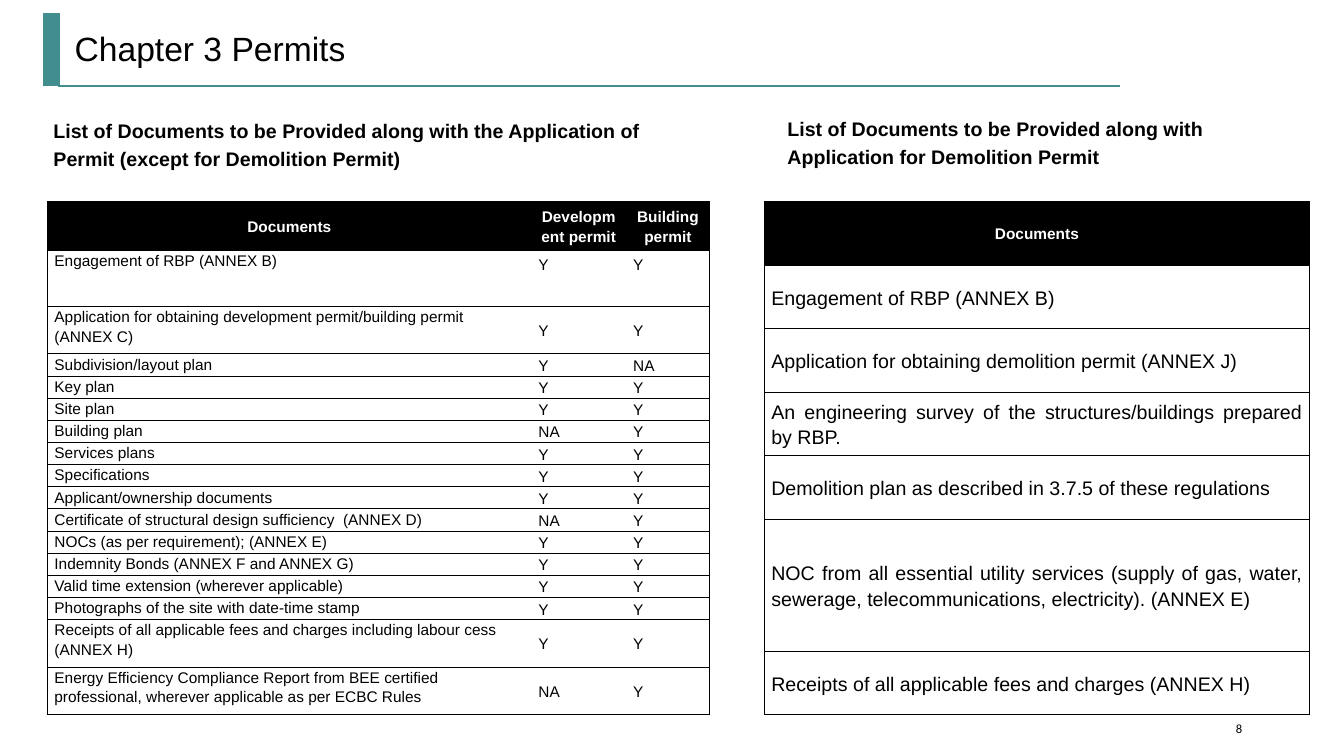
"""Build the permits slide: two headed tables of documents required with an application."""
from dataclasses import dataclass

from lxml import etree
from pptx import Presentation, util as u
from pptx.dml.color import RGBColor
from pptx.enum import shapes, text
from pptx.oxml import ns

TITLE = "Chapter 3 Permits"
PAGE = "8"
HEADINGS = {
    1: ("List of Documents to be Provided along with the Application of Permit "
        "(except for Demolition Permit)", (0.43, 1.08, 6.41, 0.64)),
    3: ("List of Documents to be Provided along with Application for Demolition Permit",
        (7.71, 1.06, 5.28, 0.64)),
}
PERMIT_ROWS = [
    ("Documents", "Development permit", "Building permit"),
    ("Engagement of RBP (ANNEX B)", "Y", "Y"),
    ("Application for obtaining development permit/building permit  (ANNEX C)", "Y", "Y"),
    ("Subdivision/layout plan", "Y", "NA"),
    ("Key plan", "Y", "Y"),
    ("Site plan", "Y", "Y"),
    ("Building plan", "NA", "Y"),
    ("Services plans", "Y", "Y"),
    ("Specifications", "Y", "Y"),
    ("Applicant/ownership documents", "Y", "Y"),
    ("Certificate of structural design sufficiency  (ANNEX D)", "NA", "Y"),
    ("NOCs (as per requirement); (ANNEX E)", "Y", "Y"),
    ("Indemnity Bonds (ANNEX F and ANNEX G)", "Y", "Y"),
    ("Valid time extension (wherever applicable)", "Y", "Y"),
    ("Photographs of the site with date-time stamp", "Y", "Y"),
    ("Receipts of all applicable fees and charges including labour cess (ANNEX H)", "Y", "Y"),
    ("Energy Efficiency Compliance Report from BEE certified professional, "
     "wherever applicable as per ECBC Rules", "NA", "Y"),
]
DEMOLITION_ROWS = [
    ("Documents",),
    ("Engagement of RBP (ANNEX B)",),
    ("Application for obtaining demolition permit (ANNEX J)",),
    ("An engineering survey of the structures/buildings prepared by RBP.",),
    ("Demolition plan as described in 3.7.5 of these regulations",),
    ("NOC from all essential utility services (supply of gas, water, sewerage, "
     "telecommunications, electricity). (ANNEX E)",),
    ("Receipts of all applicable fees and charges (ANNEX H)",),
]
PERMIT_COLS = [4.8, 0.94, 0.83]
PERMIT_HEIGHTS = [0.48, 0.56, 0.47] + [0.22] * 12 + [0.47] * 2
DEMOLITION_COLS = [5.41]
DEMOLITION_HEIGHTS = [0.63] * 5 + [1.31, 0.63]
TABLE_TOP = 2


@dataclass(frozen=True)
class Theme:
    font: str = "Arial"
    page_font: str = "Calibri"
    ink: str = "000000"
    paper: str = "FFFFFF"
    accent: str = "428D8E"
    title: int = 24
    heading: int = 14
    cell: int = 11
    large_cell: int = 14
    page: int = 9
    border: float = 0.5


THEME = Theme()
ALIGN, ANCHOR = text.PP_ALIGN, text.MSO_ANCHOR


def rgb(value):
    return RGBColor.from_string(value)


def write(tf, content, size, color=THEME.ink, font=THEME.font, bold=False,
          align=ALIGN.LEFT, spacing=1.0, gap=0):
    tf.word_wrap = True
    p = tf.paragraphs[0]
    p.text = content
    p.alignment, p.line_spacing = align, spacing
    p.space_before = p.space_after = u.Pt(gap)
    f = p.font
    f.name, f.size, f.bold = font, u.Pt(size), bold
    f.color.rgb = rgb(color)


def place(sp, box):
    sp.left, sp.top, sp.width, sp.height = map(u.Inches, box)


def add_rule(s, start, end, weight):
    line = s.shapes.add_connector(shapes.MSO_CONNECTOR.STRAIGHT,
                                  *map(u.Inches, start + end))
    line.line.color.rgb, line.line.width = rgb(THEME.accent), u.Pt(weight)
    etree.SubElement(line._element.spPr, ns.qn("a:effectLst"))


def set_borders(cell, first, last):
    visible = {"lnL": first, "lnR": last, "lnT": True, "lnB": True}
    tc_pr = cell._tc.get_or_add_tcPr()
    for i, (side, shown) in enumerate(visible.items()):
        ln = etree.Element(ns.qn(f"a:{side}"), w=str(u.Pt(THEME.border)))
        fill = etree.SubElement(ln, ns.qn("a:solidFill" if shown else "a:noFill"))
        if shown:
            etree.SubElement(fill, ns.qn("a:srgbClr"), val=THEME.ink)
        tc_pr.insert(i, ln)


def add_table(s, left, rows, widths, heights, size, gap, align):
    frame = s.shapes.add_table(len(rows), len(widths), *map(
        u.Inches, (left, TABLE_TOP, sum(widths), sum(heights))))
    table = frame.table
    table.first_row = table.horz_banding = False
    for col, width in zip(table.columns, widths):
        col.width = u.Inches(width)
    for row, height in zip(table.rows, heights):
        row.height = u.Inches(height)
    for r, values in enumerate(rows):
        for c, value in enumerate(values):
            cell, header = table.cell(r, c), r == 0
            cell.margin_left = cell.margin_right = u.Inches(0.07)
            cell.margin_top = cell.margin_bottom = 0
            cell.vertical_anchor = ANCHOR.MIDDLE
            cell.fill.solid()
            cell.fill.fore_color.rgb = rgb(THEME.ink if header else THEME.paper)
            if header:
                write(cell.text_frame, value, THEME.cell, THEME.paper, bold=True,
                      align=ALIGN.CENTER, spacing=1.15, gap=3)
            else:
                write(cell.text_frame, value, size, align=align, spacing=1.15, gap=gap)
            set_borders(cell, c == 0, c == len(widths) - 1)
    return table


def main():
    prs = Presentation()
    prs.slide_width, prs.slide_height = u.Inches(13.33), u.Inches(7.5)
    s = prs.slides.add_slide(prs.slide_layouts.get_by_name("Comparison"))
    for sp in list(s.placeholders):
        if sp.placeholder_format.idx in (2, 4):
            sp._element.getparent().remove(sp._element)

    add_rule(s, (0.58, 0.85), (11.11, 0.85), 1.5)
    add_rule(s, (0.51, 0.85), (0.51, 0.13), 12)

    title = s.shapes.title
    place(title, (0.64, 0.21, 11.14, 0.59))
    title.text_frame.auto_size = text.MSO_AUTO_SIZE.NONE
    title.text_frame.vertical_anchor = ANCHOR.MIDDLE
    write(title.text_frame, TITLE, THEME.title, spacing=0.9)

    for sp in s.placeholders:
        if sp.placeholder_format.idx in HEADINGS:
            heading, box = HEADINGS[sp.placeholder_format.idx]
            place(sp, box)
            sp.text_frame.auto_size = text.MSO_AUTO_SIZE.NONE
            sp.text_frame.vertical_anchor = ANCHOR.TOP
            write(sp.text_frame, heading, THEME.heading, bold=True, spacing=1.2, gap=6)

    permits = add_table(s, 0.47, PERMIT_ROWS, PERMIT_COLS, PERMIT_HEIGHTS,
                        THEME.cell, 3, ALIGN.LEFT)
    for r in range(1, len(PERMIT_ROWS)):
        permits.cell(r, 0).vertical_anchor = ANCHOR.TOP
    for c in (1, 2):
        permits.cell(1, c).vertical_anchor = ANCHOR.TOP
        permits.cell(1, c).margin_top = u.Inches(0.04)
    add_table(s, 7.58, DEMOLITION_ROWS, DEMOLITION_COLS, DEMOLITION_HEIGHTS,
              THEME.large_cell, 6, ALIGN.JUSTIFY)

    page = s.shapes.add_textbox(*map(u.Inches, (9.42, 6.95, 3, 0.4)))
    page.text_frame.vertical_anchor = ANCHOR.BOTTOM
    write(page.text_frame, PAGE, THEME.page, font=THEME.page_font, align=ALIGN.RIGHT)

    prs.save("out.pptx")


if __name__ == "__main__":
    main()
